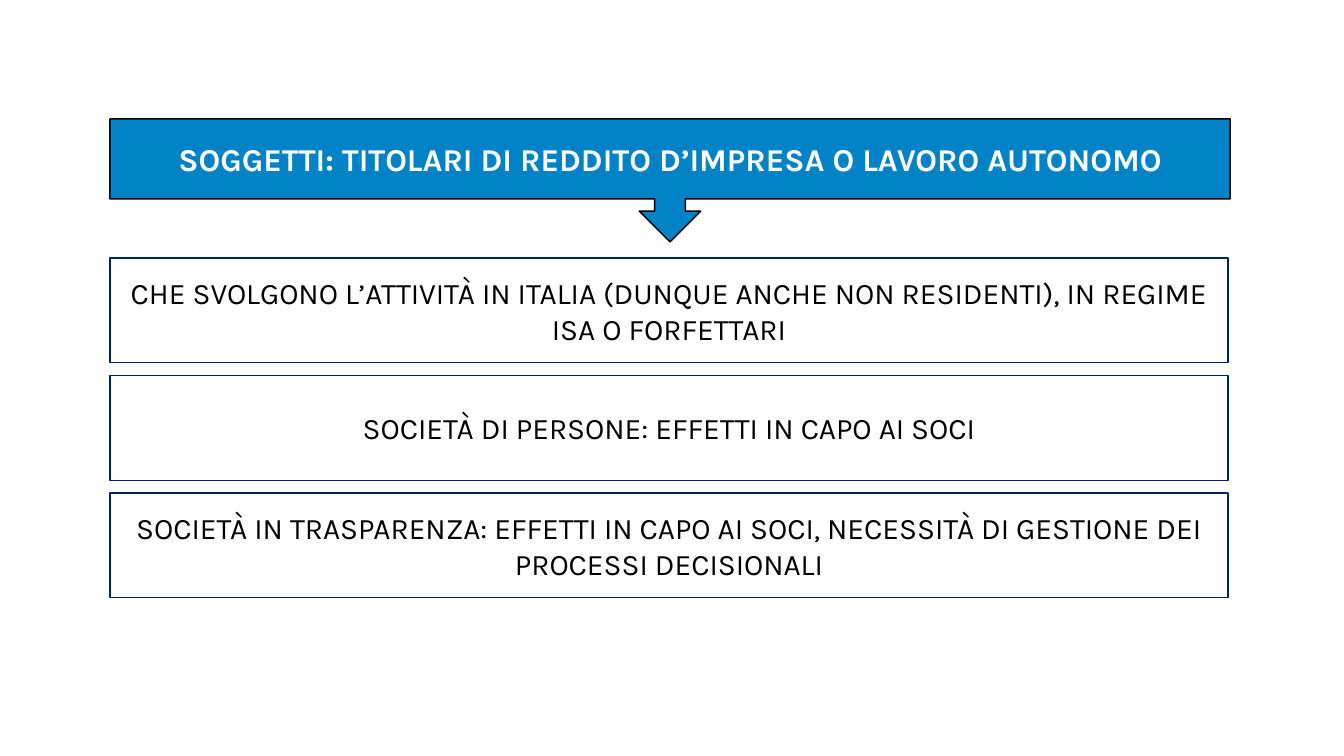
"""Build a slide with an arrow callout heading above three outlined statements."""
import pptx
import pptx.dml.color
import pptx.enum.shapes
import pptx.enum.text
import pptx.util

HEADING = "SOGGETTI: TITOLARI DI REDDITO D’IMPRESA O LAVORO AUTONOMO"
STATEMENTS = [
    "CHE SVOLGONO L’ATTIVITÀ IN ITALIA (DUNQUE ANCHE NON RESIDENTI), IN REGIME ISA O FORFETTARI",
    "SOCIETÀ DI PERSONE: EFFETTI IN CAPO AI SOCI",
    "SOCIETÀ IN TRASPARENZA: EFFETTI IN CAPO AI SOCI, NECESSITÀ DI GESTIONE DEI PROCESSI DECISIONALI",
]

FONT = "Karla"
BLUE = pptx.dml.color.RGBColor(0x00, 0x82, 0xC6)
NAVY = pptx.dml.color.RGBColor(0x00, 0x20, 0x60)
BLACK = pptx.dml.color.RGBColor(0x00, 0x00, 0x00)
WHITE = pptx.dml.color.RGBColor(0xFF, 0xFF, 0xFF)

LEFT = 1.09
STATEMENT_TOP = 2.56
STATEMENT_STEP = 1.165
Inches = pptx.util.Inches
Shapes = pptx.enum.shapes.MSO_SHAPE


def add_box(page, kind, text, top, width, height, fill, outline, color, size, bold):
    box = page.shapes.add_shape(kind, Inches(LEFT), Inches(top), Inches(width), Inches(height))
    box.shadow.inherit = False
    if fill is None:
        box.fill.background()
    else:
        box.fill.solid()
        box.fill.fore_color.rgb = fill
    box.line.color.rgb = outline
    box.line.width = pptx.util.Pt(1)
    frame = box.text_frame
    frame.word_wrap = True
    frame.vertical_anchor = pptx.enum.text.MSO_ANCHOR.MIDDLE
    para = frame.paragraphs[0]
    para.alignment = pptx.enum.text.PP_ALIGN.CENTER
    span = para.add_run()
    span.text = text
    span.font.name = FONT
    span.font.size = pptx.util.Pt(size)
    span.font.bold = bold
    span.font.color.rgb = color


def main():
    deck = pptx.Presentation()
    deck.slide_width = Inches(13.33)
    deck.slide_height = Inches(7.5)
    page = deck.slides.add_slide(deck.slide_layouts[6])
    for index, statement in enumerate(STATEMENTS):
        top = STATEMENT_TOP + index * STATEMENT_STEP
        add_box(page, Shapes.RECTANGLE, statement, top, 11.09, 1.04, None, NAVY, BLACK, 21.3, False)
    add_box(page, Shapes.DOWN_ARROW_CALLOUT, HEADING, 1.18, 11.11, 1.22, BLUE, BLACK, WHITE, 22.7, True)
    deck.save("out.pptx")


if __name__ == "__main__":
    main()
